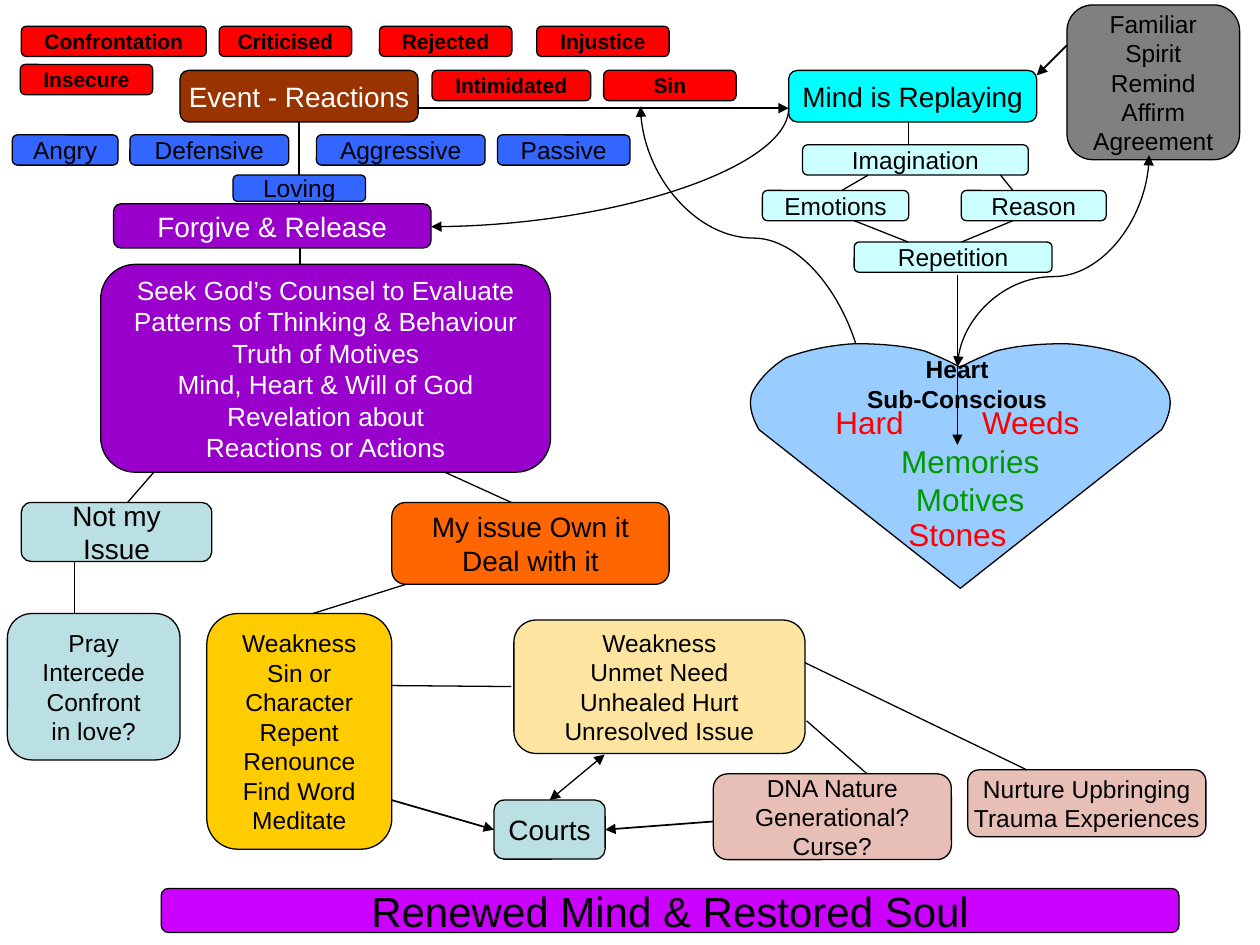
from dataclasses import dataclass
from typing import Any

from pptx import Presentation
from pptx import util as u
from pptx.dml.color import RGBColor
from pptx.enum import shapes, text
from pptx.oxml import ns, xmlchemy

BLACK, WHITE, RED, BLUE = "000000", "FFFFFF", "FF0000", "3366FF"
PURPLE, TEAL, PALE, ROSE = "9900CC", "BBE0E3", "CCFFFF", "E7BFB7"


def colour(value):
    """Turn a hex string into a colour."""
    return RGBColor.from_string(value)


def outline(item, width=0.75):
    """Give a shape or connector a black line."""
    item.line.color.rgb = colour(BLACK)
    item.line.width = u.Pt(width)


def write(shape, words, size, ink, bold):
    """Fill a shape with centred paragraphs, parted by blank lines in the words."""
    frame = shape.text_frame
    frame.margin_left = frame.margin_right = frame.margin_top = frame.margin_bottom = 0
    for index, part in enumerate(words.split("\n\n")):
        para = frame.add_paragraph() if index else frame.paragraphs[0]
        para.text = part
        para.alignment = text.PP_ALIGN.CENTER
        para.font.name = "Arial"
        para.font.size = u.Pt(size)
        para.font.bold = bold
        para.font.color.rgb = colour(ink)
    return frame


@dataclass
class Region:
    """A part of the page whose contents are measured in cm from its corner."""

    page: Any
    left: float
    top: float

    def at(self, x, y):
        """Return the page position of a point in the region."""
        return u.Cm(self.left + x), u.Cm(self.top + y)

    def node(self, x, y, width, height, fill, size, words, ink=BLACK, bold=False):
        """Add a rounded, labelled box."""
        shape = self.page.shapes.add_shape(
            shapes.MSO_SHAPE.FLOWCHART_ALTERNATE_PROCESS,
            *self.at(x, y), u.Cm(width), u.Cm(height))
        shape.shadow.inherit = False
        shape.fill.solid()
        shape.fill.fore_color.rgb = colour(fill)
        outline(shape)
        frame = write(shape, words, size, ink, bold)
        frame.word_wrap = False
        frame.vertical_anchor = text.MSO_ANCHOR.MIDDLE
        return shape

    def note(self, x, y, width, height, size, words, ink, bold=False):
        """Add free-standing text."""
        box = self.page.shapes.add_textbox(*self.at(x, y), u.Cm(width), u.Cm(height))
        write(box, words, size, ink, bold).word_wrap = True

    def line(self, start, end, ends=(), width=0.75, kind=shapes.MSO_CONNECTOR.STRAIGHT):
        """Add a connector with arrowheads at the named ends."""
        link = self.page.shapes.add_connector(kind, *self.at(*start), *self.at(*end))
        outline(link, width)
        for name in ends:
            arrow = xmlchemy.OxmlElement(f"a:{name}End")
            arrow.set("type", "triangle")
            link.line._get_or_add_ln().append(arrow)
        link._element.spPr.append(xmlchemy.OxmlElement("a:effectLst"))
        return link

    def curve(self, x, y, width, height, turn, ends=("tail",), bend=None, flip=False):
        """Add a turned curve: an S with the given bend, or a quarter without one."""
        link = self.line((x, y), (x + width, y + height), ends,
                         kind=shapes.MSO_CONNECTOR.CURVE)
        link.rotation = turn if hasattr(link, "rotation") else 0
        properties = link._element.spPr
        frame = properties.find(ns.qn("a:xfrm"))
        frame.set("rot", str(turn * 60000))
        if flip:
            frame.set("flipH", "1")
        geometry = properties.find(ns.qn("a:prstGeom"))
        if bend is None:
            geometry.set("prst", "curvedConnector2")
            return
        guide = xmlchemy.OxmlElement("a:gd")
        guide.set("name", "adj1")
        guide.set("fmla", f"val {round(bend * 100000)}")
        geometry.find(ns.qn("a:avLst")).append(guide)


def reactions(page, box):
    """Draw the event with its triggers and reactions."""
    area = Region(page, *box)
    event = area.node(3.38, 0.89, 4.8, 1.04, "993300", 16, "Event - Reactions", WHITE)
    area.line((5.78, 1.93), (5.78, 3.58)).begin_connect(event, 2)
    for x, y, width, words in (
            (0.18, 0, 3.73, "Confrontation"), (4.17, 0, 2.67, "Criticised"),
            (7.4, 0, 2.67, "Rejected"), (10.57, 0, 2.67, "Injustice"),
            (0.16, 0.77, 2.67, "Insecure"), (8.46, 0.89, 3.2, "Intimidated"),
            (11.92, 0.89, 2.67, "Sin")):
        area.node(x, y, width, 0.61, RED, 12, words, bold=True)
    for x, y, width, height, words in (
            (0, 2.19, 2.13, 0.61, "Angry"), (2.37, 2.19, 3.2, 0.61, "Defensive"),
            (6.13, 2.19, 3.4, 0.61, "Aggressive"), (9.78, 2.19, 2.67, 0.61, "Passive"),
            (4.45, 3, 2.67, 0.53, "Loving")):
        area.node(x, y, width, height, BLUE, 14, words)


def replaying(page, box):
    """Draw the replaying mind, its cycle and the familiar spirit."""
    area = Region(page, *box)
    area.node(0.53, 1.32, 5, 1.04, "00FFFF", 16, "Mind is Replaying")
    area.node(6.14, 0, 3.48, 3.12, "808080", 14,
              "Familiar\nSpirit\nRemind\nAffirm\nAgreement")
    for x, y, width, words in (
            (0.81, 2.82, 4.55, "Imagination"), (0, 3.74, 2.95, "Emotions"),
            (4.01, 3.74, 2.92, "Reason"), (1.85, 4.78, 3.99, "Repetition")):
        area.node(x, y, width, 0.61, PALE, 14, words)
    for start, end in (
            ((2.94, 2.36), (2.94, 2.82)), ((2.13, 3.43), (1.6, 3.74)),
            ((4.8, 3.43), (5.05, 3.74)), ((1.85, 4.35), (2.94, 4.78)),
            ((5.05, 4.35), (4.01, 4.78))):
        area.line(start, end)
    area.line((6.14, 0.81), (5.53, 1.42), ["tail"], 1)


def counsel(page, box):
    """Draw forgiveness and the counsel below it."""
    area = Region(page, *box)
    area.node(0.26, 0, 6.4, 0.89, PURPLE, 16, "Forgive & Release", WHITE)
    area.node(0, 1.22, 9.07, 4.19, PURPLE, 15,
              "Seek God’s Counsel to Evaluate\nPatterns of Thinking & Behaviour\n\n"
              "Truth of Motives\nMind, Heart & Will of God\n\n"
              "Revelation about\n\nReactions or Actions", WHITE)
    area.line((4.02, 0.89), (4.02, 1.22))


def issues(page, box):
    """Draw whose issue it is and the ways to deal with it."""
    area = Region(page, *box)
    area.node(0.28, 0, 3.84, 1.19, TEAL, 16, "Not my\nIssue")
    area.node(0, 2.24, 3.48, 2.95, TEAL, 14, "Pray\nIntercede\nConfront\nin love?")
    area.node(7.75, 0, 5.59, 1.65, "FF6600", 16, "My issue Own it\nDeal with it")
    area.node(4.02, 2.24, 3.73, 4.75, "FFCC00", 14,
              "Weakness\nSin or\nCharacter\nRepent\nRenounce\nFind Word\nMeditate")
    area.node(10.21, 2.37, 5.87, 2.69, "FDE5A1", 14,
              "Weakness\nUnmet Need\nUnhealed Hurt\nUnresolved Issue")
    area.node(14.23, 5.47, 4.8, 1.73, ROSE, 14, "DNA Nature\nGenerational?\nCurse?")
    area.node(19.36, 5.39, 4.8, 1.35, ROSE, 14, "Nurture Upbringing\nTrauma Experiences")
    courts = area.node(9.81, 6, 2.24, 1.19, TEAL, 16, "Courts")
    for start, end in (
            ((8.82, -0.61), (10.16, 0)), ((2.95, -0.61), (2.42, 0)),
            ((1.35, 1.19), (1.35, 2.24)), ((8.03, 1.65), (6.15, 2.24)),
            ((7.75, 3.69), (10.16, 3.71)), ((16.11, 4.4), (17.33, 5.47)),
            ((16.08, 3.23), (20.55, 5.39))):
        area.line(start, end)
    for start, end, side, ends, width in (
            ((7.75, 6), (9.81, 6.6), 1, ["tail"], 1),
            ((14.23, 6.43), (12.05, 6.6), 3, ["tail"], 1),
            ((12.04, 5.08), (10.93, 6), 0, ["head", "tail"], 0.75)):
        area.line(start, end, ends, width).end_connect(courts, side)


def links(page, box):
    """Draw the connectors that run between regions."""
    area = Region(page, *box)
    area.line((8.43, 2.18), (15.9, 2.18), ["tail"])
    area.curve(11.1, -0.23, 2.39, 7.21, 90)
    area.curve(12.14, 2.92, 6.1, 4.55, 90, bend=0.565, flip=True)
    area.curve(19.1, 3.33, 4.27, 3.86, 270, ("head", "tail"), bend=0.426)


def bezier(points, steps=12):
    """Return points along a cubic curve, leaving out its start."""
    weights = [((1 - t) ** 3, 3 * t * (1 - t) ** 2, 3 * t * t * (1 - t), t ** 3)
               for t in (step / steps for step in range(1, steps + 1))]
    return [tuple(sum(w * p[axis] for w, p in zip(row, points)) for axis in (0, 1))
            for row in weights]


def heart(page, box):
    """Draw the heart, mirrored about its middle, and what it holds."""
    area = Region(page, *box)
    middle, notch, tip = 4.27, (0, 0.48), (0, 4.93)
    half = [notch]
    for curve in (((-0.15, 0.38), (-0.51, 0.23), (-0.71, 0.15)),
                  ((-1.17, 0.03), (-1.65, 0), (-2.13, 0)),
                  ((-2.64, 0.03), (-3.1, 0.13), (-3.51, 0.28)),
                  ((-3.84, 0.48), (-4.06, 0.74), (-4.19, 0.97)),
                  ((-4.29, 1.22), (-4.19, 1.5), (-4.06, 1.73))):
        half += bezier((half[-1], *curve))
    rim = half + [tip] + [(-x, y) for x, y in reversed(half[1:])]
    start, *rest = [area.at(middle + x, y) for x, y in rim]
    builder = page.shapes.build_freeform(*start)
    builder.add_line_segments(rest, close=True)
    shape = builder.convert_to_shape()
    shape.shadow.inherit = False
    shape.fill.solid()
    shape.fill.fore_color.rgb = colour("99CCFF")
    outline(shape)
    area.note(1.6, 0.21, 5.21, 1.19, 14, "Heart\nSub-Conscious", BLACK, True)
    area.line((4.21, -1.39), (4.21, 2.04), ["tail"])
    for x, y, words in ((1.14, 1.2, "Hard"), (4.39, 1.2, "Weeds"), (2.91, 3.46, "Stones")):
        area.note(x, y, 2.6, 0.73, 18, words, RED)
    area.note(2.82, 1.99, 3.3, 1.52, 18, "Memories\nMotives", "009A00")


def banner(page, box):
    """Draw the closing banner."""
    Region(page, *box).node(0, 0, 20.52, 0.89, "CC00FF", 24, "Renewed Mind & Restored Soul")


def main():
    """Build the slide and save it."""
    deck = Presentation()
    deck.slide_width, deck.slide_height = u.Cm(25.4), u.Cm(19.05)
    page = deck.slides.add_slide(deck.slide_layouts[6])
    for draw, box in (
            (reactions, (0.25, 0.53)), (replaying, (15.37, 0.1)),
            (counsel, (2.03, 4.11)), (issues, (0.15, 10.13)),
            (links, (0, 0)), (heart, (15.09, 6.93)), (banner, (3.25, 17.91))):
        draw(page, box)
    deck.save("out.pptx")


if __name__ == "__main__":
    main()
